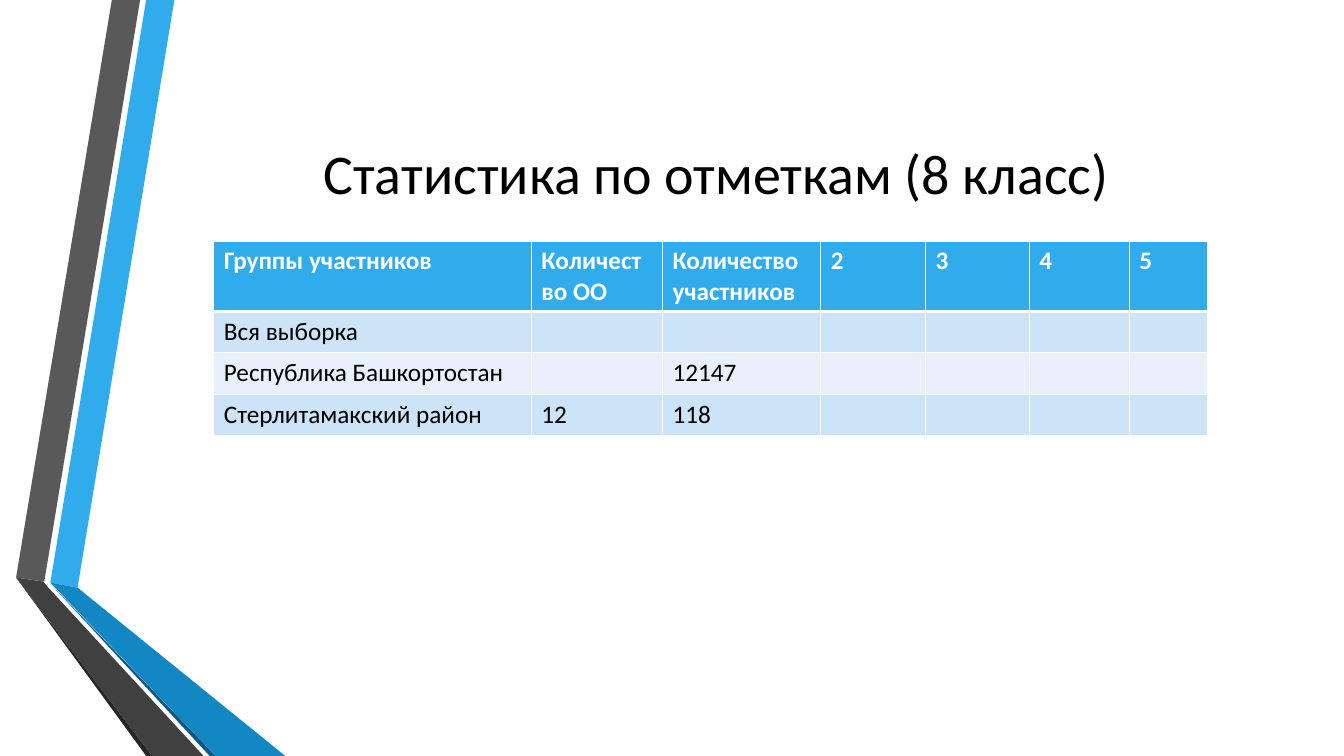
"""Build the slide with mark statistics for grade 8."""
from dataclasses import dataclass

from lxml import etree
from pptx import Presentation
from pptx.dml.color import RGBColor
from pptx.enum.text import MSO_ANCHOR, PP_ALIGN
from pptx.oxml.ns import qn
from pptx.slide import Slide
from pptx.table import _Cell
from pptx.text.text import _Paragraph
from pptx.util import Inches, Pt

MIDDLE = MSO_ANCHOR.MIDDLE
CENTER = PP_ALIGN.CENTER
FONT = "Calibri"
WHITE, BLACK, BLUE = "FFFFFF", "000000", "30ACEC"
BAND_COLORS = ("CDE3F8", "E8F1FB")
THIN, THICK = 1, 3


@dataclass(frozen=True)
class Ribbon:
    color: str
    corners: tuple[tuple[float, float], ...]


RIBBONS = (
    Ribbon(BLUE, ((0.5, 5.78), (0.77, 5.83), (1.73, 0), (1.45, 0))),
    Ribbon("595959", ((1.39, 0), (1.11, 0), (0.16, 5.73), (0.44, 5.77))),
    Ribbon("262626", ((0.16, 5.73), (1.45, 7.5), (1.51, 7.5))),
    Ribbon("0C5A82", ((0.5, 5.79), (2.08, 7.5), (2.14, 7.5))),
    Ribbon("1287C3", ((0.5, 5.78), (2.14, 7.5), (2.83, 7.5), (0.77, 5.83))),
    Ribbon("404040", ((2.02, 7.5), (0.48, 5.83), (0.43, 5.77), (0.16, 5.73), (1.51, 7.5))),
)

COLUMN_WIDTHS = (3.15, 1.3, 1.57, 1.04, 1.03, 0.99, 0.78)
ROW_HEIGHTS = (0.7, 0.41, 0.41, 0.41)
STATISTICS = (
    ("Группы участников", "Количество ОО", "Количество участников", "2", "3", "4", "5"),
    ("Вся выборка", "", "", "", "", "", ""),
    ("Республика Башкортостан", "", "12147", "", "", "", ""),
    ("Стерлитамакский район", "12", "118", "", "", "", ""),
)


def rgb(color: str) -> RGBColor:
    return RGBColor.from_string(color)


def add_run(paragraph: _Paragraph, text: str, size: int, color: str, bold: bool = False) -> None:
    run = paragraph.add_run()
    run.text = text
    run.font.name = FONT
    run.font.size = Pt(size)
    run.font.bold = bold
    run.font.color.rgb = rgb(color)


def draw_ribbon(slide: Slide, ribbon: Ribbon) -> None:
    corners = [(Inches(x), Inches(y)) for x, y in ribbon.corners]
    outline = slide.shapes.build_freeform(*corners[0])
    outline.add_line_segments(corners[1:], close=True)
    band = outline.convert_to_shape()
    band.shadow.inherit = False
    band.fill.solid()
    band.fill.fore_color.rgb = rgb(ribbon.color)
    band.line.fill.background()


def draw_title(slide: Slide) -> None:
    title = slide.shapes.add_textbox(Inches(1.62), Inches(0.75), Inches(10.96), Inches(1.92))
    frame = title.text_frame
    frame.word_wrap = True
    frame.vertical_anchor = MIDDLE
    heading = frame.paragraphs[0]
    heading.alignment = CENTER
    add_run(heading, "Статистика по отметкам (8 класс)", 40, BLACK)


def add_borders(cell: _Cell, top: int, bottom: int) -> None:
    properties = cell._tc.get_or_add_tcPr()
    for side, width in (("L", THIN), ("R", THIN), ("T", top), ("B", bottom)):
        border = etree.SubElement(properties, qn(f"a:ln{side}"), w=str(Pt(width)))
        fill = etree.SubElement(border, qn("a:solidFill"))
        etree.SubElement(fill, qn("a:srgbClr"), val=WHITE)


def draw_statistics(slide: Slide) -> None:
    table = slide.shapes.add_table(
        len(ROW_HEIGHTS), len(COLUMN_WIDTHS), Inches(2.12), Inches(2.39),
        Inches(sum(COLUMN_WIDTHS)), Inches(sum(ROW_HEIGHTS)),
    ).table
    for column, width in zip(table.columns, COLUMN_WIDTHS):
        column.width = Inches(width)
    for index, (row, height, values) in enumerate(zip(table.rows, ROW_HEIGHTS, STATISTICS)):
        row.height = Inches(height)
        is_header = index == 0
        for cell, value in zip(row.cells, values):
            add_borders(cell, THICK if index == 1 else THIN, THICK if is_header else THIN)
            cell.fill.solid()
            cell.fill.fore_color.rgb = rgb(BLUE if is_header else BAND_COLORS[(index - 1) % 2])
            if value:
                add_run(cell.text_frame.paragraphs[0], value, 18,
                        WHITE if is_header else BLACK, is_header)


def main() -> None:
    presentation = Presentation()
    presentation.slide_width = Inches(13.33)
    presentation.slide_height = Inches(7.5)
    slide = presentation.slides.add_slide(presentation.slide_layouts[6])
    for ribbon in RIBBONS:
        draw_ribbon(slide, ribbon)
    draw_title(slide)
    draw_statistics(slide)
    presentation.save("out.pptx")


if __name__ == "__main__":
    main()
